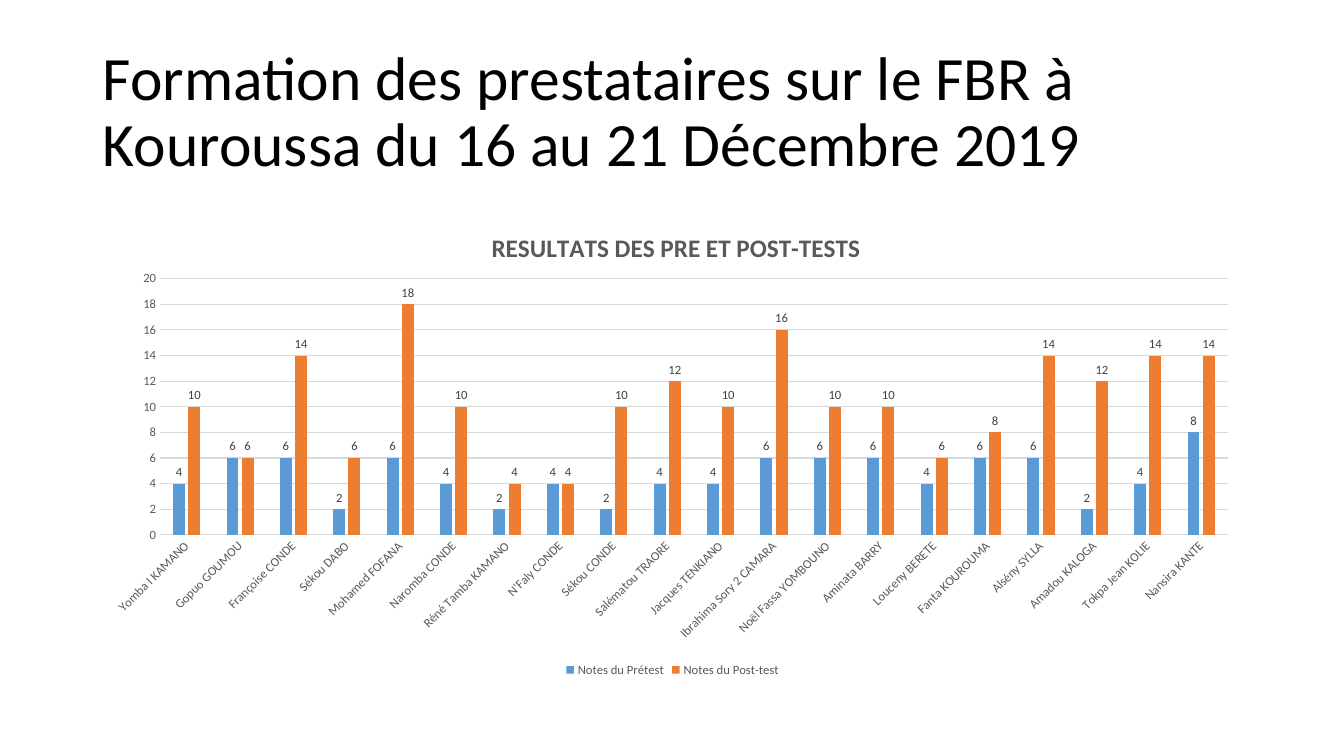
from lxml import etree
from pptx import Presentation
from pptx.chart.data import CategoryChartData
from pptx.dml.color import RGBColor
from pptx.enum import chart as ch, text
from pptx.oxml.ns import qn
from pptx.util import Inches, Pt

# Content
TITLE = "Formation des prestataires sur le FBR à Kouroussa du 16 au 21 Décembre 2019"
CHART_TITLE = "RESULTATS DES PRE ET POST-TESTS"
SERIES_NAMES = ("Notes du Prétest", "Notes du Post-test")
SCORES = [  # participant, pre-test, post-test
    ("Yomba I KAMANO", 4, 10),
    ("Gopuo GOUMOU", 6, 6),
    ("Françoise CONDE", 6, 14),
    ("Sékou DABO", 2, 6),
    ("Mohamed FOFANA", 6, 18),
    ("Naromba CONDE", 4, 10),
    ("Réné Tamba KAMANO", 2, 4),
    ("N'Faly CONDE", 4, 4),
    ("Sékou CONDE", 2, 10),
    ("Salématou TRAORE", 4, 12),
    ("Jacques TENKIANO", 4, 10),
    ("Ibrahima Sory 2 CAMARA", 6, 16),
    ("Noël Fassa YOMBOUNO", 6, 10),
    ("Aminata BARRY", 6, 10),
    ("Louceny BERETE", 4, 6),
    ("Fanta KOUROUMA", 6, 8),
    ("Alsény SYLLA", 6, 14),
    ("Amadou KALOGA", 2, 12),
    ("Tokpa Jean KOLIE", 4, 14),
    ("Nansira KANTE", 8, 14),
]

FONT = "Calibri"
BLACK = RGBColor(0x00, 0x00, 0x00)
GREY = RGBColor(0x59, 0x59, 0x59)
LABEL_GREY = RGBColor(0x40, 0x40, 0x40)
GRID_GREY = RGBColor(0xD9, 0xD9, 0xD9)
SERIES_COLORS = (RGBColor(0x5B, 0x9B, 0xD5), RGBColor(0xED, 0x7D, 0x31))
LEFT, WIDTH = Inches(0.92), Inches(11.5)


def set_font(font, size, color, bold=False):
    font.name, font.size, font.bold = FONT, Pt(size), bold
    font.color.rgb = color


def write(tf, content, size=18, color=BLACK, bold=False, spacing=None):
    p = tf.paragraphs[0]
    p.line_spacing = spacing
    r = p.add_run()
    r.text = content
    set_font(r.font, size, color, bold)


def set_line(line, color, width=0.75):
    line.color.rgb = color
    line.width = Pt(width)


def place(element, index, **values):
    """Give a chart part a manual layout, in fractions of the chart."""
    layout = element.find(qn("c:layout"))
    if layout is None:
        layout = etree.Element(qn("c:layout"))
        element.insert(index, layout)
    manual = etree.SubElement(layout, qn("c:manualLayout"))
    for tag, value in values.items():
        etree.SubElement(manual, qn("c:" + tag)).set("val", str(value))


prs = Presentation()
prs.slide_width, prs.slide_height = Inches(13.33), Inches(7.5)
s = prs.slides.add_slide(prs.slide_layouts[5])

# Slide title
title = s.shapes.title
title.left, title.top, title.width, title.height = LEFT, Inches(0.4), WIDTH, Inches(1.45)
tf = title.text_frame
tf.word_wrap = True
tf.auto_size = text.MSO_AUTO_SIZE.NONE
tf.vertical_anchor = text.MSO_ANCHOR.MIDDLE
write(tf, TITLE, size=44, spacing=0.9)
tf.paragraphs[0].alignment = text.PP_ALIGN.LEFT

# Chart
names, *score_columns = zip(*SCORES)
data = CategoryChartData()
data.categories = names
for name, values in zip(SERIES_NAMES, score_columns):
    data.add_series(name, values)
chart = s.shapes.add_chart(ch.XL_CHART_TYPE.COLUMN_CLUSTERED, LEFT, Inches(2),
                           WIDTH, Inches(4.76), data).chart
set_font(chart.font, 10, BLACK)

chart.has_title = True
write(chart.chart_title.text_frame, CHART_TITLE, color=GREY, bold=True)
place(chart.chart_title._element, 1, xMode="edge", yMode="edge", x=0.34, y=0.05)
place(chart.plots[0]._element.getparent(), 0, layoutTarget="inner",
      xMode="edge", yMode="edge", x=0.058, y=0.161, w=0.921, h=0.534)

chart.has_legend = True
chart.legend.position = ch.XL_LEGEND_POSITION.BOTTOM
chart.legend.include_in_layout = False
set_font(chart.legend.font, 9, GREY)

# Columns and value labels
plot = chart.plots[0]
plot.gap_width, plot.overlap, plot.vary_by_categories = 219, -27, False
for series, color in zip(plot.series, SERIES_COLORS):
    series.format.fill.solid()
    series.format.fill.fore_color.rgb = color
    labels = series.data_labels
    labels.show_value = True
    labels.position = ch.XL_LABEL_POSITION.OUTSIDE_END
    set_font(labels.font, 9, LABEL_GREY)

# Axes
names_axis, scores_axis = chart.category_axis, chart.value_axis
for axis in (names_axis, scores_axis):
    axis.major_tick_mark = axis.minor_tick_mark = ch.XL_TICK_MARK.NONE
    set_font(axis.tick_labels.font, 9, GREY)
set_line(names_axis.format.line, GRID_GREY)
names_axis._element.find(qn("c:txPr")).find(qn("a:bodyPr")).set("rot", "-2700000")
scores_axis.format.line.fill.background()
scores_axis.minimum_scale, scores_axis.maximum_scale, scores_axis.major_unit = 0, 20, 2
set_line(scores_axis.major_gridlines.format.line, GRID_GREY)

prs.save("out.pptx")
